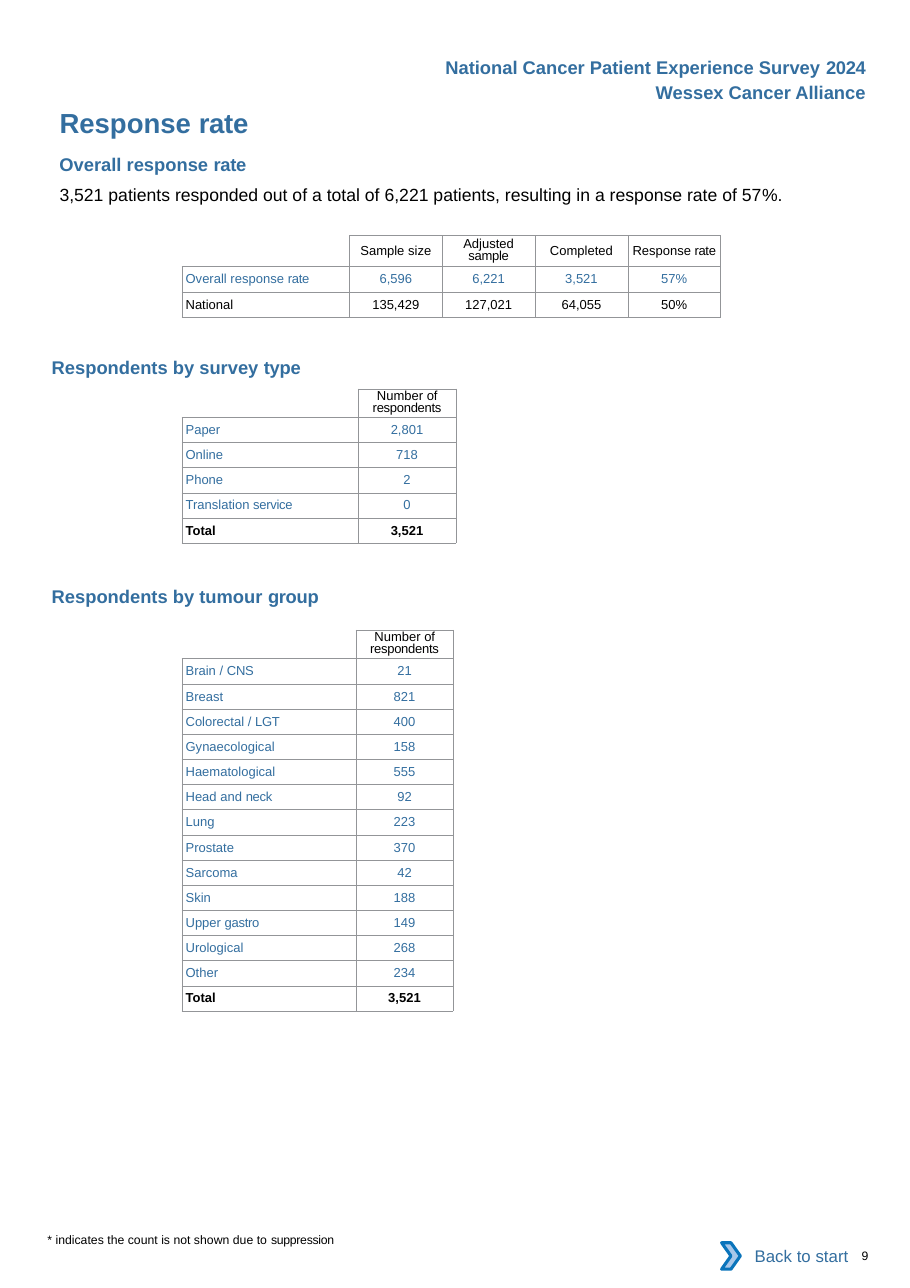
from pptx import Presentation, util as u
from pptx.dml.color import RGBColor
from pptx.enum import shapes, text
from pptx.oxml.ns import qn
from lxml import etree

BLUE, BLACK, GREY = "336E9F", "000000", "939598"
LEFT, MID, RIGHT = text.PP_ALIGN.LEFT, text.PP_ALIGN.CENTER, text.PP_ALIGN.RIGHT

deck = Presentation()
deck.slide_width, deck.slide_height = u.Inches(8.26), u.Inches(11.69)
COL, ROW = deck.slide_width / 100, deck.slide_height / 100


def grid(x, y, w, h):
    return [int(n) for n in (x * COL, y * ROW, w * COL, h * ROW)]


def paint(part, tone):
    part.solid()
    part.fore_color.rgb = RGBColor.from_string(tone)


def write(frame, words, size, tone=BLUE, bold=False, align=LEFT):
    para = frame.paragraphs[0]
    para.alignment = align
    parts = words.split("|")
    for i, part in enumerate(parts):
        run = para.add_run()
        run.text = part
        font = run.font
        font.name, font.size, font.bold = "Arial", u.Pt(size), bold
        paint(font.fill, tone)
        if i and i == len(parts) - 1:
            run._r.get_or_add_rPr().set("spc", "-20")
    return para


def label(slide, box, words, size, tone=BLUE, bold=False, align=LEFT, shape=None):
    if shape is None:
        shape = slide.shapes.add_textbox(*grid(*box))
    else:
        shape.left, shape.top, shape.width, shape.height = grid(*box)
    frame = shape.text_frame
    frame.word_wrap = True
    frame.auto_size = text.MSO_AUTO_SIZE.NONE
    frame.vertical_anchor = text.MSO_ANCHOR.TOP
    frame.margin_left = frame.margin_right = frame.margin_top = frame.margin_bottom = 0
    write(frame, words, size, tone, bold, align)


def edge(cell, sides):
    props = cell._tc.get_or_add_tcPr()
    for i, side in enumerate(sides):
        line = etree.Element(qn("a:ln" + side), w=str(u.Pt(0.5)))
        fill = etree.SubElement(line, qn("a:solidFill"))
        etree.SubElement(fill, qn("a:srgbClr"), val=GREY)
        props.insert(i, line)


def table(slide, box, first, top, heads, rows, last):
    wide, high = box[2:]
    data = [[""] + heads] + rows
    grid_tab = slide.shapes.add_table(len(data), len(data[0]), *grid(*box)).table
    grid_tab.first_row = grid_tab.horz_banding = False
    for c, col in enumerate(grid_tab.columns):
        col.width = int(COL * ((wide - first) / len(heads) if c else first))
    for r, row in enumerate(grid_tab.rows):
        row.height = int(ROW * ((high - top) / len(rows) if r else top))
        for c, words in enumerate(data[r]):
            cell = grid_tab.cell(r, c)
            cell.margin_left = cell.margin_right = 0
            cell.margin_top = cell.margin_bottom = 0
            cell.vertical_anchor = text.MSO_ANCHOR.MIDDLE
            cell.fill.background()
            edge(cell, "LRTB" if r or c else "RB")
            if not words:
                blank = cell.text_frame.paragraphs[0]._p
                etree.SubElement(blank, qn("a:endParaRPr"), sz="850")
                continue
            final = r == len(rows)
            tone = BLUE if r and not final else BLACK
            bold = final and last
            para = write(cell.text_frame, words, 8.5, tone, bold, MID if c else LEFT)
            if not c:
                cell.margin_left = int(COL * 0.4)
            elif words.startswith(("Adjusted", "Number")):
                cell.margin_left = cell.margin_right = int(COL * 1.2)
                para.line_spacing = u.Pt(7.6)


def header(slide):
    lines = ["National Cancer Patient Experience Survey |2024", "Wessex Cancer Alliance"]
    for i, words in enumerate(lines):
        label(slide, (40, 4.36 + i * 1.92, 55.16, 1.71), words, 12, BLUE, True, RIGHT)


def footer(slide):
    label(slide, (5.21, 95.64, 40, 1.11), "* indicates the count is not shown due to |suppression", 8, BLACK)
    label(slide, (94.67, 96.92, 4, 1.11), "9", 8, BLACK)
    group = slide.shapes.add_group_shape()
    kinds = shapes.MSO_SHAPE
    back = group.shapes.add_shape(kinds.RECTANGLE, *grid(80.15, 95.72, 14.29, 3.59))
    arrow = group.shapes.add_shape(kinds.CHEVRON, *grid(79.3, 96.49, 2.06, 2.05))
    for shape, tone in ((back, "FFFFFF"), (arrow, "A8C7E9")):
        shape.shadow.inherit = False
        paint(shape.fill, tone)
    back.line.fill.background()
    paint(arrow.line.fill, "0A74BB")
    arrow.line.width = u.Pt(2)
    back.text_frame.vertical_anchor = text.MSO_ANCHOR.MIDDLE
    write(back.text_frame, "Back to start", 11, align=RIGHT)


def overall(slide):
    label(slide, (6.54, 8.21, 50, 2.57), "Response |rate", 18, BLUE, True, shape=slide.shapes.title)
    label(slide, (6.54, 11.89, 50, 1.71), "Overall response |rate", 12, BLUE, True)
    label(slide, (6.54, 14.29, 89, 1.63),
          "3,521 patients responded out of a total of 6,221 patients, resulting in a response rate of 57|%.",
          11.5, BLACK)
    table(slide, (20, 18.31, 59.2, 6.33), 18.4, 2.4,
          ["Sample size", "Adjusted| sample", "Completed", "Response| rate"],
          [["Overall response |rate", "6,596", "6,221", "3,521", "57%"],
           ["National", "135,429", "127,021", "64,055", "50%"]], False)


def count(slide, title, y, gap, wide, high, first, rows):
    label(slide, (5.69, y, 50, 1.71), title, 12, BLUE, True)
    table(slide, (20, y + gap, wide, high), first, 2.22,
          ["Number |of respondents"], rows + [["Total", "3,521"]], True)


TYPES = [["Paper", "2,801"], ["Online", "718"], ["Phone", "2"], ["Translation |service", "0"]]
TUMOURS = [
    ["Brain / |CNS", "21"], ["Breast", "821"], ["Colorectal / |LGT", "400"],
    ["Gynaecological", "158"], ["Haematological", "555"], ["Head and |neck", "92"],
    ["Lung", "223"], ["Prostate", "370"], ["Sarcoma", "42"], ["Skin", "188"],
    ["Upper |gastro", "149"], ["Urological", "268"], ["Other", "234"],
]


def main():
    slide = deck.slides.add_slide(deck.slide_layouts[5])
    header(slide)
    overall(slide)
    count(slide, "Respondents by survey |type", 27.63, 2.57, 30.1, 11.98, 19.37, TYPES)
    count(slide, "Respondents by tumour |group", 45.42, 3.51, 29.78, 29.6, 19.13, TUMOURS)
    footer(slide)
    deck.save("out.pptx")


if __name__ == "__main__":
    main()
